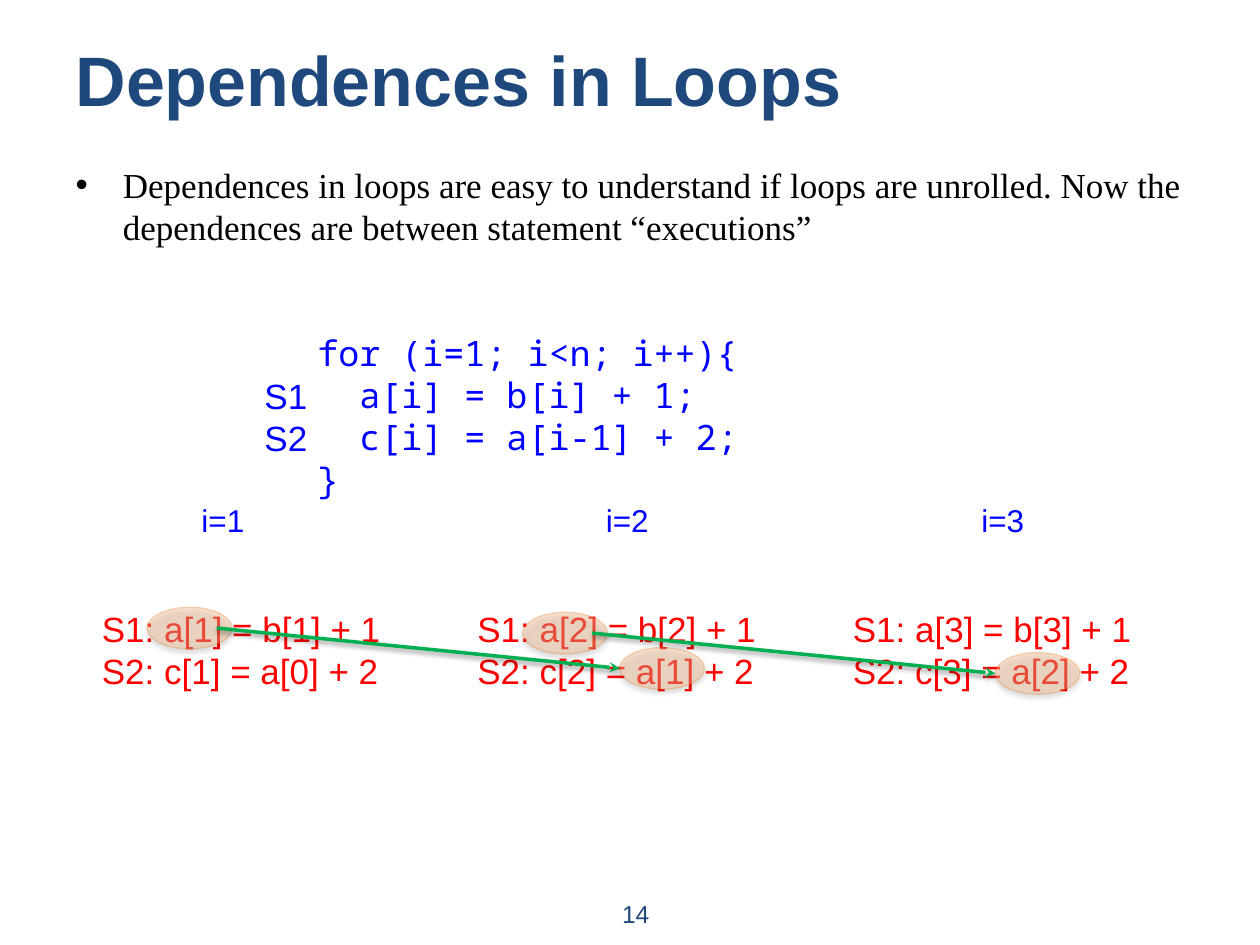
from dataclasses import dataclass

from lxml import etree
from pptx import Presentation
from pptx.dml.color import RGBColor
from pptx.enum.shapes import MSO_CONNECTOR, MSO_SHAPE
from pptx.enum.text import MSO_ANCHOR, PP_ALIGN
from pptx.oxml.ns import qn
from pptx.util import Inches, Pt

ELLIPSE = MSO_SHAPE.OVAL
STRAIGHT = MSO_CONNECTOR.STRAIGHT
LEFT, CENTER = PP_ALIGN.LEFT, PP_ALIGN.CENTER
TOP, MIDDLE, BOTTOM = MSO_ANCHOR.TOP, MSO_ANCHOR.MIDDLE, MSO_ANCHOR.BOTTOM

NAVY = RGBColor(0x1F, 0x49, 0x7D)
BLACK = RGBColor(0, 0, 0)
BLUE = RGBColor(0, 0, 0xFF)
RED = RGBColor(0xFF, 0, 0)
GREEN = RGBColor(0, 0xB0, 0x50)
PEACH = RGBColor(0xFA, 0xC0, 0x90)
ORANGE = RGBColor(0xE4, 0x6C, 0x0A)

SANS, SERIF, MONO, COURIER = "Arial", "Times New Roman", "Noto Sans Mono", "Courier New"


@dataclass(frozen=True)
class Style:
    size: float
    color: RGBColor
    font: str = SANS
    bold: bool = False


@dataclass(frozen=True)
class Dependence:
    """A highlighted write and the highlighted read, one iteration later."""
    write_left: float
    write_top: float


CODE = Style(20, BLUE, MONO)
CODE_END = Style(20, BLUE, COURIER)
LABEL = Style(20, BLUE)
ITERATION = Style(18, BLUE)
STATEMENT = Style(20, RED)

CODE_LINES = [
    ("for (i=1; i<n; i++){", CODE),
    ("  a[i] = b[i] + 1;", CODE),
    ("  c[i] = a[i-1] + 2;", CODE),
    ("}", CODE_END),
]
DEPENDENCES = [Dependence(1.17, 4.82), Dependence(4.15, 4.86)]

ITERATION_LEFTS = [1.5, 4.71, 7.69]
STATEMENTS_LEFT, STATEMENTS_PITCH = 0.71, 2.98
MARK_WIDTH, MARK_HEIGHT = 0.67, 0.33
READ_RIGHT, READ_DOWN = 3.75, 0.32
ARROW_INSET = 0.55


def write_lines(frame, lines: list[tuple[str, Style]], align=LEFT) -> None:
    for index, (text, style) in enumerate(lines):
        para = frame.add_paragraph() if index else frame.paragraphs[0]
        para.alignment = align
        span = para.add_run()
        span.text = text
        span.font.size = Pt(style.size)
        span.font.name = style.font
        span.font.bold = style.bold
        span.font.color.rgb = style.color


def place(shape, left: float, top: float, width: float, height: float) -> None:
    shape.left, shape.top = Inches(left), Inches(top)
    shape.width, shape.height = Inches(width), Inches(height)


def add_text(page, left: float, top: float, width: float, height: float,
             lines: list[tuple[str, Style]], wrap: bool = False,
             align=LEFT, anchor=TOP) -> None:
    box = page.shapes.add_textbox(Inches(left), Inches(top), Inches(width), Inches(height))
    box.text_frame.word_wrap = wrap
    box.text_frame.vertical_anchor = anchor
    write_lines(box.text_frame, lines, align)


def set_alpha(fill, percent: int) -> None:
    color = fill._xPr.find(f"{qn('a:solidFill')}/{qn('a:srgbClr')}")
    etree.SubElement(color, qn("a:alpha"), val=str(percent * 1000))


def add_shadow(shape, distance: float, percent: int) -> None:
    """Give the shape a soft shadow straight below it."""
    properties = shape._element.spPr
    effects = properties.find(qn("a:effectLst"))
    if effects is None:
        effects = etree.SubElement(properties, qn("a:effectLst"))
    shadow = etree.SubElement(effects, qn("a:outerShdw"), blurRad=str(Pt(3.1)),
                              dist=str(Pt(distance)), dir="5400000", rotWithShape="0")
    color = etree.SubElement(shadow, qn("a:srgbClr"), val="000000")
    etree.SubElement(color, qn("a:alpha"), val=str(percent * 1000))


def add_mark(page, left: float, top: float) -> None:
    mark = page.shapes.add_shape(ELLIPSE, Inches(left), Inches(top),
                                 Inches(MARK_WIDTH), Inches(MARK_HEIGHT))
    mark.fill.solid()
    mark.fill.fore_color.rgb = PEACH
    set_alpha(mark.fill, 39)
    mark.line.width = Pt(0.75)
    mark.line.color.rgb = ORANGE
    set_alpha(mark.line.fill, 25)
    mark.shadow.inherit = False
    add_shadow(mark, 1.8, 35)


def add_arrow(page, x1: float, y1: float, x2: float, y2: float) -> None:
    arrow = page.shapes.add_connector(STRAIGHT, Inches(x1), Inches(y1), Inches(x2), Inches(y2))
    arrow.line.width = Pt(2)
    arrow.line.color.rgb = GREEN
    etree.SubElement(arrow.line._get_or_add_ln(), qn("a:tailEnd"), type="stealth")
    add_shadow(arrow, 1.6, 38)


def add_dependence(page, dependence: Dependence) -> None:
    left, top = dependence.write_left, dependence.write_top
    read_left, read_top = left + READ_RIGHT, top + READ_DOWN
    add_mark(page, left, top)
    add_mark(page, read_left, read_top)
    add_arrow(page, left + ARROW_INSET, top + MARK_HEIGHT / 2,
              read_left, read_top + MARK_HEIGHT / 2)


def main() -> None:
    deck = Presentation()
    deck.slide_width, deck.slide_height = Inches(10), Inches(7.5)
    page = deck.slides.add_slide(deck.slide_layouts[1])

    title, body = page.shapes.title, page.placeholders[1]
    place(title, 0.5, 0, 9, 1.25)
    title.text_frame.vertical_anchor = MIDDLE
    write_lines(title.text_frame, [("Dependences in Loops", Style(40, NAVY, bold=True))])
    place(body, 0.5, 1.25, 9, 5.58)
    write_lines(body.text_frame, [(
        "Dependences in loops are easy to understand if loops are unrolled. "
        "Now the dependences are between statement “executions”",
        Style(20, BLACK, SERIF))])

    add_text(page, 2.42, 2.58, 3.58, 1.45, CODE_LINES)
    for label, top in (("S1", 2.92), ("S2", 3.26)):
        add_text(page, 2, top, 0.55, 0.44, [(label, LABEL)])

    for index, label_left in enumerate(ITERATION_LEFTS):
        i = index + 1
        add_text(page, label_left, 3.93, 0.55, 0.4, [(f"i={i}", ITERATION)])
        add_text(page, STATEMENTS_LEFT + index * STATEMENTS_PITCH, 4.77, 2.58, 0.77,
                 [(f"S1: a[{i}] = b[{i}] + 1", STATEMENT),
                  (f"S2: c[{i}] = a[{i - 1}] + 2", STATEMENT)], wrap=True)

    for dependence in DEPENDENCES:
        add_dependence(page, dependence)

    add_text(page, 4.67, 7.02, 0.75, 0.4, [("14", Style(14, NAVY))],
             wrap=True, align=CENTER, anchor=BOTTOM)
    deck.save("out.pptx")


if __name__ == "__main__":
    main()
